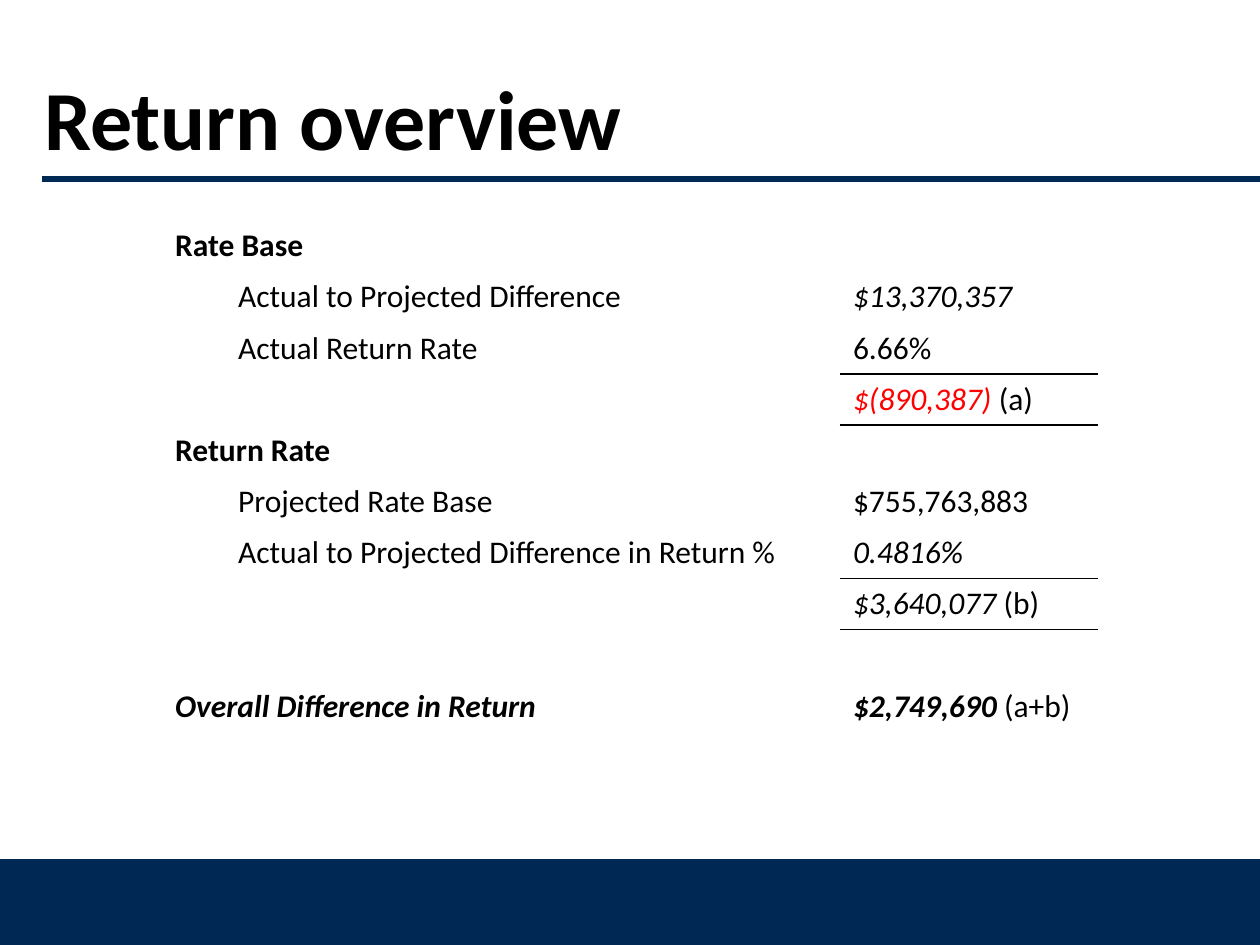
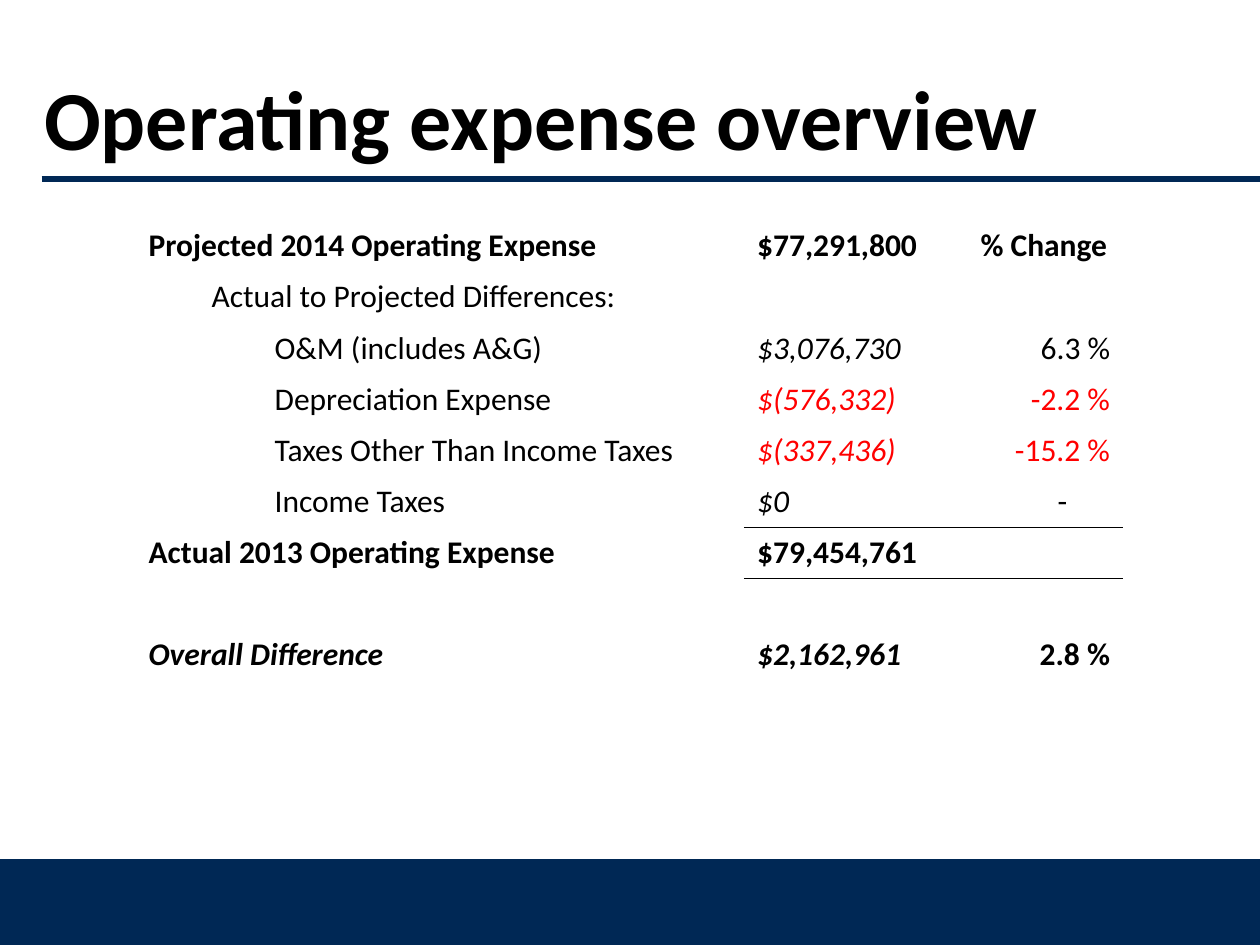
"""Build two rate-review slides: return overview and operating expense overview."""
from dataclasses import dataclass

from lxml.etree import SubElement
from pptx import Presentation
from pptx.dml.color import RGBColor
from pptx.enum.shapes import MSO_CONNECTOR as Connector, MSO_SHAPE as Shape
from pptx.enum.text import MSO_ANCHOR as Anchor, MSO_AUTO_SIZE as AutoSize, PP_ALIGN as Align
from pptx.oxml.ns import qn
from pptx.util import Inches, Pt


@dataclass(frozen=True)
class Theme:
    """Colours, font and type sizes shared by the slides."""
    font: str = "Calibri"
    navy: str = "002855"
    ink: str = "000000"
    loss: str = "FF0000"
    title_size: int = 48
    body_size: int = 18
    row_height: float = 0.406
    indent: float = 0.5


THEME = Theme()


@dataclass(frozen=True)
class Style:
    """Weight, slant and colour of a stretch of text."""
    bold: bool = False
    italic: bool = False
    color: str = THEME.ink


PLAIN = Style()
BOLD = Style(bold=True)
ITALIC = Style(italic=True)
TOTAL = Style(bold=True, italic=True)
LOSS = Style(italic=True, color=THEME.loss)
LOSS_RATE = Style(color=THEME.loss)


@dataclass(frozen=True)
class Entry:
    """Content of one table cell, with an optional plain reference after it."""
    text: str = ""
    style: Style = PLAIN
    reference: str = ""
    level: int = 0
    align: Align = Align.LEFT
    right_margin: float = 0.1


BLANK = Entry()


def rate(text, style=PLAIN, right_margin=0.1):
    """Return a right-aligned percentage entry."""
    return Entry(text, style, align=Align.RIGHT, right_margin=right_margin)


RETURN_ROWS = [
    [Entry("Rate Base", BOLD), BLANK],
    [Entry("Actual to Projected Difference", level=1), Entry("$13,370,357", ITALIC)],
    [Entry("Actual Return Rate", level=1), Entry("6.66%")],
    [BLANK, Entry("$(890,387) ", LOSS, "(a)")],
    [Entry("Return Rate", BOLD), BLANK],
    [Entry("Projected Rate Base", level=1), Entry("$755,763,883")],
    [Entry("Actual to Projected Difference in Return %", level=1), Entry("0.4816%", ITALIC)],
    [BLANK, Entry("$3,640,077 ", ITALIC, "(b)")],
    [BLANK, BLANK],
    [Entry("Overall Difference in Return", TOTAL), Entry("$2,749,690 ", TOTAL, "(a+b)")],
]

EXPENSE_ROWS = [
    [Entry("Projected 2014 Operating Expense", BOLD), Entry("$77,291,800", BOLD),
     Entry("% Change", BOLD, align=Align.CENTER)],
    [Entry("Actual to Projected Differences:", level=1), BLANK, BLANK],
    [Entry("O&M (includes A&G)", level=2), Entry("$3,076,730", ITALIC), rate("6.3 %")],
    [Entry("Depreciation Expense", level=2), Entry("$(576,332)", LOSS),
     rate("-2.2 %", LOSS_RATE)],
    [Entry("Taxes Other Than Income Taxes", level=2), Entry("$(337,436)", LOSS),
     rate("-15.2 %", LOSS_RATE)],
    [Entry("Income Taxes", level=2), Entry("$0", ITALIC), rate("-", right_margin=0.44)],
    [Entry("Actual 2013 Operating Expense", BOLD), Entry("$79,454,761", BOLD), BLANK],
    [BLANK, BLANK, BLANK],
    [Entry("Overall Difference", TOTAL), Entry("$2,162,961", TOTAL), rate("2.8 %", BOLD)],
]


def apply_style(font, style):
    """Set weight, slant and colour on a font."""
    font.bold = style.bold
    font.italic = style.italic
    font.color.rgb = RGBColor.from_string(style.color)


def set_paragraph_font(paragraph, size, style=None):
    """Set the theme font at a size, with a style when all runs share it."""
    paragraph.font.name = THEME.font
    paragraph.font.size = Pt(size)
    if style:
        apply_style(paragraph.font, style)


def add_band(slide):
    """Draw the navy band along the foot of the slide."""
    band = slide.shapes.add_shape(
        Shape.RECTANGLE, Inches(0), Inches(6.83), Inches(10), Inches(0.67))
    band.shadow.inherit = False
    band.fill.solid()
    band.fill.fore_color.rgb = RGBColor.from_string(THEME.navy)
    band.line.color.rgb = RGBColor.from_string(THEME.navy)
    band.line.width = Pt(2)


def add_title_rule(slide):
    """Draw the navy rule under the title."""
    rule = slide.shapes.add_connector(
        Connector.STRAIGHT, Inches(0.33), Inches(1.42), Inches(10), Inches(1.42))
    rule.line.color.rgb = RGBColor.from_string(THEME.navy)
    rule.line.width = Pt(3)
    SubElement(rule._element.spPr, qn("a:effectLst"))


def set_title(slide, text):
    """Place and format the title placeholder."""
    title = slide.shapes.title
    title.left, title.top = Inches(0.25), Inches(0.3)
    title.width, title.height = Inches(8.67), Inches(1.25)
    frame = title.text_frame
    frame.text = text
    frame.word_wrap = True
    frame.auto_size = AutoSize.NONE
    frame.vertical_anchor = Anchor.MIDDLE
    heading = frame.paragraphs[0]
    heading.alignment = Align.LEFT
    set_paragraph_font(heading, THEME.title_size, BOLD)


def add_slide(deck, title):
    """Add a title-only slide with the shared band, rule and title."""
    slide = deck.slides.add_slide(deck.slide_layouts[5])
    add_band(slide)
    add_title_rule(slide)
    set_title(slide, title)
    return slide


def add_border(cell, edge, width):
    """Append a solid border to one edge of a cell."""
    border = SubElement(cell._tc.get_or_add_tcPr(), qn(f"a:{edge}"), w=str(Pt(width)))
    fill = SubElement(border, qn("a:solidFill"))
    SubElement(fill, qn("a:srgbClr"), val=THEME.ink)


def fill_cell(cell, entry):
    """Write an entry into a cell with its indent, alignment and style."""
    cell.fill.background()
    cell.margin_right = Inches(entry.right_margin)
    paragraph = cell.text_frame.paragraphs[0]
    paragraph.alignment = entry.align
    if entry.level:
        paragraph.level = entry.level
        properties = paragraph._p.get_or_add_pPr()
        properties.set("marL", str(Inches(THEME.indent * entry.level)))
        properties.set("indent", "0")
    if entry.text:
        paragraph.add_run().text = entry.text
    if entry.reference:
        paragraph.add_run().text = entry.reference
        set_paragraph_font(paragraph, THEME.body_size)
        for run, style in zip(paragraph.runs, (entry.style, PLAIN)):
            apply_style(run.font, style)
    else:
        set_paragraph_font(paragraph, THEME.body_size, entry.style)


def add_statement(slide, left, widths, rows, rules):
    """Add a statement table; rules maps a row to the line width below its figures."""
    table = slide.shapes.add_table(
        len(rows), len(widths), Inches(left), Inches(1.75),
        Inches(sum(widths)), Inches(THEME.row_height * len(rows))).table
    table.first_row = table.horz_banding = False
    for column, width in zip(table.columns, widths):
        column.width = Inches(width)
    for row_index, entries in enumerate(rows):
        table.rows[row_index].height = Inches(THEME.row_height)
        for column_index, entry in enumerate(entries):
            cell = table.cell(row_index, column_index)
            for edge, ruled_row in (("lnT", row_index - 1), ("lnB", row_index)):
                if column_index and ruled_row in rules:
                    add_border(cell, edge, rules[ruled_row])
            fill_cell(cell, entry)


def main():
    """Build and save the deck."""
    deck = Presentation()
    deck.slide_width, deck.slide_height = Inches(10), Inches(7.5)
    return_slide = add_slide(deck, "Return overview")
    add_statement(return_slide, 1.29, [5.38, 2.04], RETURN_ROWS, {2: 1, 3: 1, 6: 1, 7: 0.5})
    expense_slide = add_slide(deck, "Operating expense overview")
    add_statement(expense_slide, 1.08, [4.83, 1.75, 1.25], EXPENSE_ROWS, {5: 1, 6: 1})
    deck.save("out.pptx")


if __name__ == "__main__":
    main()
